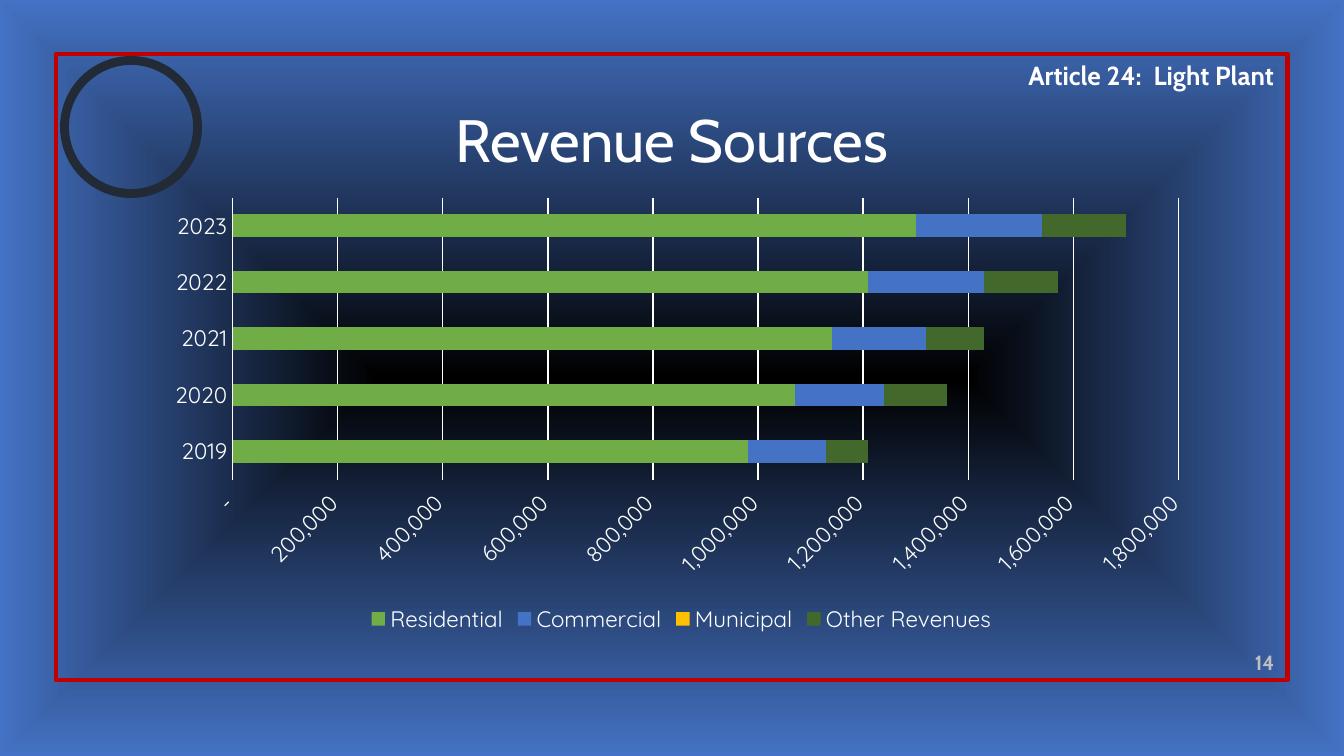
from lxml import etree
from pptx import Presentation
from pptx.chart.data import CategoryChartData
from pptx.dml.color import RGBColor
from pptx.enum.chart import XL_CHART_TYPE as ChartType, XL_LEGEND_POSITION as LegendPosition
from pptx.enum.chart import XL_TICK_MARK as TickMark
from pptx.enum.shapes import MSO_SHAPE as Shape
from pptx.enum.text import MSO_ANCHOR as Anchor, PP_ALIGN as Align
from pptx.oxml import parse_xml
from pptx.oxml.ns import nsdecls, qn
from pptx.util import Inches, Pt

WHITE = RGBColor(0xFF, 0xFF, 0xFF)
GREY = RGBColor(0xBF, 0xBF, 0xBF)
RED = RGBColor(0xC0, 0x00, 0x00)
NAVY = RGBColor(0x22, 0x2A, 0x35)
BLACK = RGBColor(0x00, 0x00, 0x00)
SLATE = RGBColor(0x44, 0x54, 0x6A)
BLUE = RGBColor(0x44, 0x72, 0xC4)
GREEN = RGBColor(0x70, 0xAD, 0x47)
GOLD = RGBColor(0xFF, 0xC0, 0x00)
DARK_GREEN = RGBColor(0x43, 0x68, 0x2B)

BACKGROUND_STOPS = [(0, BLACK), (100, BLUE), (100, SLATE)]
OUTLINES = [
    (Shape.RECTANGLE, (0.42, 0.4, 9.16, 4.66), RED, 2.25),
    (Shape.OVAL, (0.48, 0.45, 0.99, 0.99), NAVY, 4.75),
]
TEXTS = [
    ("Article 24:  Light Plant", (6.91, 0.39, 2.67, 0.34), 14, WHITE, True, Align.RIGHT, Anchor.TOP),
    ("Revenue Sources", (0.5, 0.65, 9, 0.77), 32, WHITE, False, Align.CENTER, Anchor.MIDDLE),
    ("14", (9, 4.83, 0.58, 0.24), 11, GREY, True, Align.RIGHT, Anchor.BOTTOM),
]
YEARS = ["2019", "2020", "2021", "2022", "2023"]
REVENUES = [
    ("Residential", GREEN, (980000, 1070000, 1140000, 1210000, 1300000)),
    ("Commercial", BLUE, (150000, 170000, 180000, 220000, 240000)),
    ("Municipal", GOLD, (0, 0, 0, 0, 0)),
    ("Other Revenues", DARK_GREEN, (80000, 120000, 110000, 140000, 160000)),
]
NUMBER_FORMAT = '_(* #,##0_);_(* \\(#,##0\\);_(* "-"_);_(@_)'
CHART_AREA = (1.14, 1.4, 7.86, 3.35)
PLOT_AREA = (0.59, 0.07, 7.04, 2.1)


def place(area):
    return [Inches(length) for length in area]


def style_font(font, name, size, color, bold=False):
    font.name = name
    font.size = Pt(size)
    font.color.rgb = color
    font.bold = bold


def paint_background(page):
    page.background.fill.solid()
    stops = "".join(
        f'<a:gs pos="{position * 1000}"><a:srgbClr val="{color}"/></a:gs>'
        for position, color in BACKGROUND_STOPS
    )
    gradient = parse_xml(
        f'<a:gradFill {nsdecls("a")} rotWithShape="1"><a:gsLst>{stops}</a:gsLst>'
        '<a:path path="shape"><a:fillToRect l="50000" t="50000" r="50000" b="50000"/></a:path>'
        "</a:gradFill>"
    )
    properties = page.element.find(".//" + qn("p:bgPr"))
    properties.replace(properties[0], gradient)


def add_outline(page, kind, area, color, width):
    outline = page.shapes.add_shape(kind, *place(area))
    outline.shadow.inherit = False
    outline.fill.background()
    outline.line.color.rgb = color
    outline.line.width = Pt(width)


def add_text(page, text, area, size, color, bold, align, anchor):
    frame = page.shapes.add_textbox(*place(area)).text_frame
    frame.word_wrap = True
    frame.vertical_anchor = anchor
    para = frame.paragraphs[0]
    para.text = text
    para.alignment = align
    style_font(para.font, "Cabin", size, color, bold)


def set_plot_layout(chart):
    plot_area = chart.element.find(".//" + qn("c:plotArea"))
    for layout in plot_area.findall(qn("c:layout")):
        plot_area.remove(layout)
    layout = etree.Element(qn("c:layout"))
    manual = etree.SubElement(layout, qn("c:manualLayout"))
    settings = [("layoutTarget", "inner"), ("xMode", "edge"), ("yMode", "edge")]
    settings += [
        (tag, str(part / whole))
        for tag, part, whole in zip("xywh", PLOT_AREA, CHART_AREA[2:] * 2)
    ]
    for tag, value in settings:
        etree.SubElement(manual, qn(f"c:{tag}")).set("val", value)
    plot_area.insert(0, layout)


def add_revenue_chart(page):
    data = CategoryChartData()
    data.categories = YEARS
    for name, _, values in REVENUES:
        data.add_series(name, values)
    chart = page.shapes.add_chart(ChartType.BAR_STACKED, *place(CHART_AREA), data).chart
    chart.has_title = False
    style_font(chart.font, "Quicksand", 10, WHITE)

    plot = chart.plots[0]
    plot.gap_width = 150
    plot.overlap = 100
    plot.vary_by_categories = False
    for series, (_, color, _) in zip(plot.series, REVENUES):
        series.format.fill.solid()
        series.format.fill.fore_color.rgb = color

    for axis in (chart.category_axis, chart.value_axis):
        axis.major_tick_mark = TickMark.NONE
        axis.minor_tick_mark = TickMark.NONE
        axis.format.line.fill.background()
        style_font(axis.tick_labels.font, "Quicksand", 12, WHITE)

    amounts = chart.value_axis
    amounts.minimum_scale = 0
    amounts.maximum_scale = 1800000
    amounts.major_unit = 200000
    amounts.tick_labels.number_format = NUMBER_FORMAT
    amounts.tick_labels.number_format_is_linked = False
    amounts.has_major_gridlines = True
    amounts.major_gridlines.format.line.color.rgb = WHITE
    amounts.major_gridlines.format.line.width = Pt(0.75)
    label_body = chart.element.find(f".//{qn('c:valAx')}/{qn('c:txPr')}/{qn('a:bodyPr')}")
    label_body.set("rot", "-2700000")

    chart.has_legend = True
    chart.legend.position = LegendPosition.BOTTOM
    chart.legend.include_in_layout = False
    style_font(chart.legend.font, "Quicksand", 12, WHITE)
    set_plot_layout(chart)


def main():
    deck = Presentation()
    deck.slide_width = Inches(10)
    deck.slide_height = Inches(10 * 9 / 16)
    page = deck.slides.add_slide(deck.slide_layouts[6])
    paint_background(page)
    for outline in OUTLINES:
        add_outline(page, *outline)
    for text in TEXTS:
        add_text(page, *text)
    add_revenue_chart(page)
    deck.save("out.pptx")


if __name__ == "__main__":
    main()
